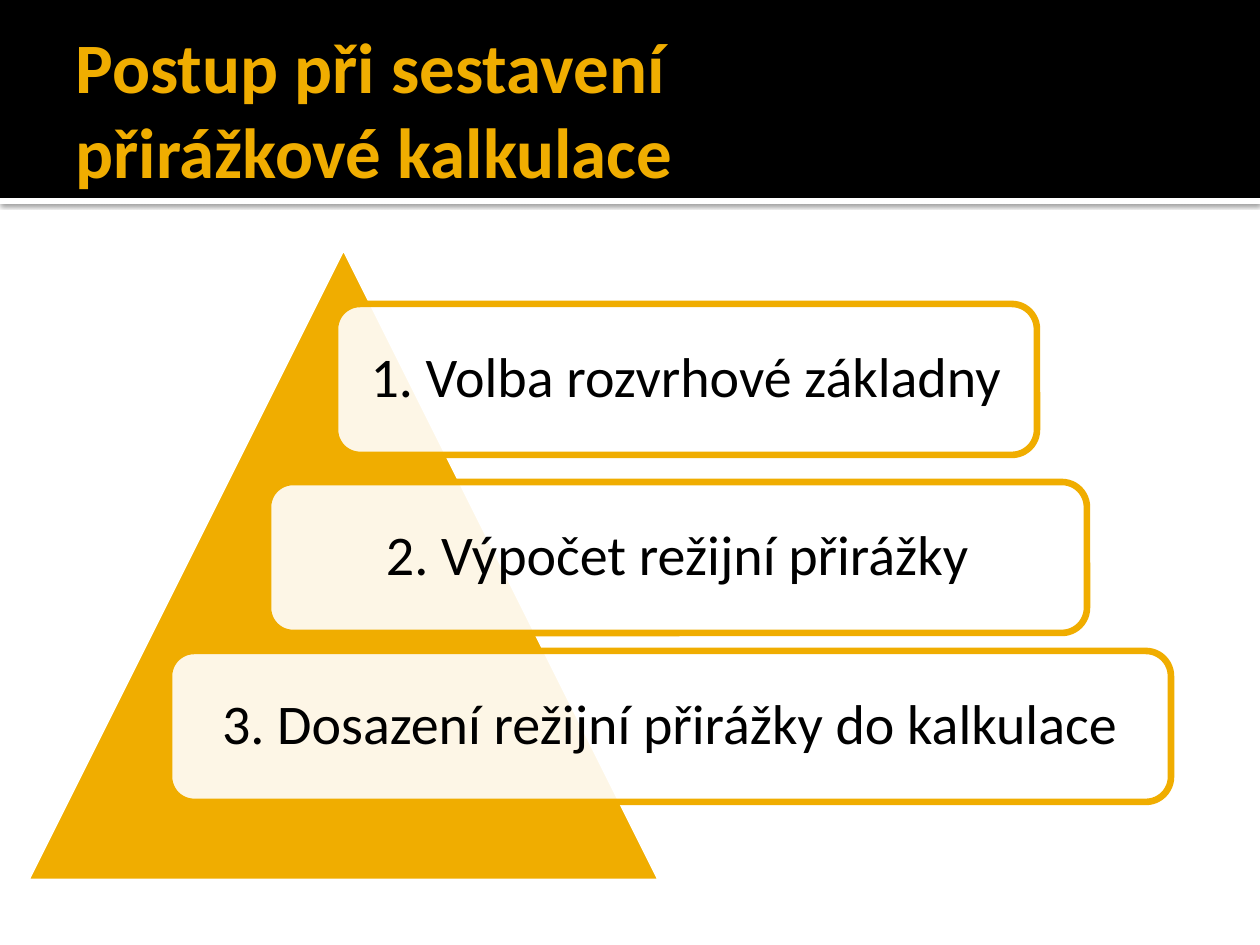
"""Builds the slide on the steps of an overhead-rate costing."""
import dataclasses

import lxml.etree
import pptx
import pptx.dml.color
import pptx.enum.shapes
import pptx.enum.text
import pptx.oxml
import pptx.oxml.ns
import pptx.util


@dataclasses.dataclass(frozen=True)
class Theme:
    gold: str = "F0AD00"
    black: str = "000000"
    white: str = "FFFFFF"
    font: str = "Calibri"
    title_size: float = 40.5
    step_size: int = 32
    line_width: float = 3.78


theme = Theme()
kinds = pptx.enum.shapes.MSO_SHAPE
aligns = pptx.enum.text.PP_ALIGN
middle = pptx.enum.text.MSO_ANCHOR.MIDDLE
SCALE = pptx.util.Inches(1) / 126


def add_box(kind, bounds, fill, line=None):
    box = page.shapes.add_shape(kind, *[round(n * SCALE) for n in bounds])
    box.shadow.inherit = False
    box.fill.solid()
    box.fill.fore_color.rgb = pptx.dml.color.RGBColor.from_string(fill)
    if line:
        box.line.color.rgb = pptx.dml.color.RGBColor.from_string(line)
        box.line.width = pptx.util.Pt(theme.line_width)
    else:
        box.line.fill.background()
    return box


def add_span(para, text, size, color, bold=False):
    span = para.add_run()
    span.text = text
    span.font.name = theme.font
    span.font.size = pptx.util.Pt(size)
    span.font.bold = bold
    span.font.color.rgb = pptx.dml.color.RGBColor.from_string(color)


deck = pptx.Presentation()
deck.slide_width = round(1260 * SCALE)
deck.slide_height = round(945 * SCALE)
page = deck.slides.add_slide(deck.slide_layouts[5])

strip = add_box(kinds.RECTANGLE, (0, 198, 1260, 6), theme.white)
effects = strip.element.spPr.find(pptx.oxml.ns.qn("a:effectLst"))
effects.append(pptx.oxml.parse_xml(
    f'<a:outerShdw {pptx.oxml.ns.nsdecls("a")} blurRad="31750" dist="10160" dir="5400000">'
    f'<a:srgbClr val="{theme.black}"><a:alpha val="60000"/></a:srgbClr></a:outerShdw>'))
add_box(kinds.RECTANGLE, (0, 0, 1260, 198), theme.black)

title = page.shapes.title
title.left, title.top, title.width, title.height = [round(n * SCALE) for n in (63, 21, 1134, 173)]
page.shapes.element.append(title.element)
frame = title.text_frame
frame.word_wrap = True
frame.auto_size = pptx.enum.text.MSO_AUTO_SIZE.NONE
frame.vertical_anchor = middle
frame.margin_left = pptx.util.Inches(0.1)
frame.margin_right = frame.margin_top = frame.margin_bottom = pptx.util.Inches(0.05)
para = frame.paragraphs[0]
para.alignment = aligns.LEFT
add_span(para, "Postup při sestavení ", theme.title_size, theme.gold, bold=True)
para.add_line_break()
add_span(para, "přirážkové kalkulace", theme.title_size, theme.gold, bold=True)

add_box(kinds.ISOSCELES_TRIANGLE, (25, 245, 637, 637), theme.gold, theme.white)

steps = [
    ("1. Volba rozvrhové základny", 335, 304, 702),
    ("2. Výpočet režijní přirážky", 268, 482, 819),
    ("3. Dosazení režijní přirážky do kalkulace", 169, 651, 1002),
]
for text, left, top, width in steps:
    box = add_box(kinds.ROUNDED_RECTANGLE, (left, top, width, 151), theme.white, theme.gold)
    color = box.element.spPr.find(pptx.oxml.ns.qn("a:solidFill"))[0]
    lxml.etree.SubElement(color, pptx.oxml.ns.qn("a:alpha"), val="90000")
    frame = box.text_frame
    frame.word_wrap = True
    frame.vertical_anchor = middle
    frame.margin_left = frame.margin_right = pptx.util.Inches(0.13)
    frame.margin_top = frame.margin_bottom = pptx.util.Inches(0.13)
    para = frame.paragraphs[0]
    para.alignment = aligns.CENTER
    para.line_spacing = 0.9
    add_span(para, text, theme.step_size, theme.black)

deck.save("out.pptx")
